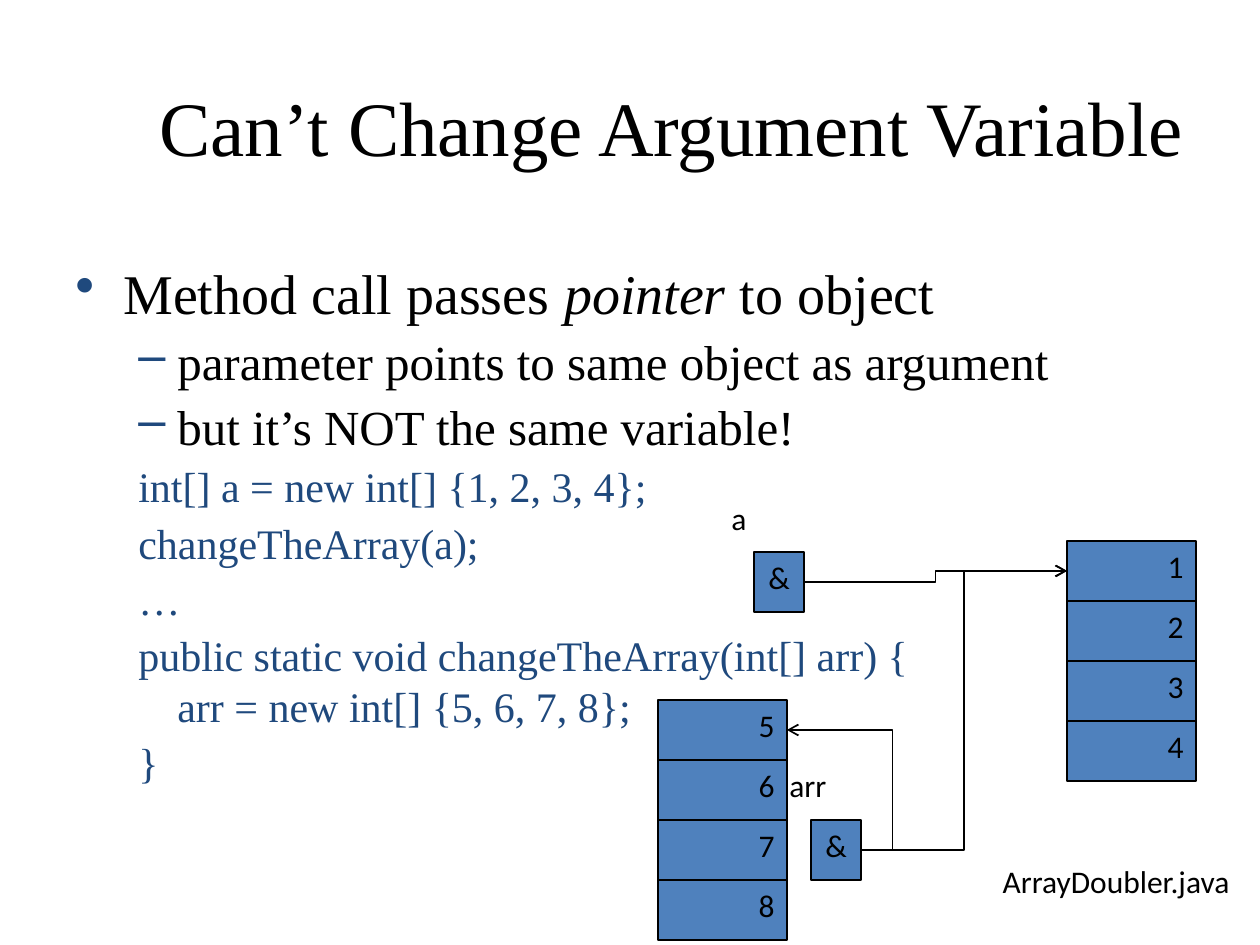
from lxml import etree
from pptx import Presentation, util as u
from pptx.dml.color import RGBColor
from pptx.enum import shapes, text
from pptx.oxml.ns import qn

PX = 914400 / 126
SERIF, SANS = "Times New Roman", "Calibri"
BLACK, NAVY, BLUE = "000000", "1F497D", "4F81BD"


def px(*lengths):
    """Turn pixel lengths into a list of EMU lengths."""
    return [u.Emu(round(length * PX)) for length in lengths]


def style(paragraph, name, size, color, align=text.PP_ALIGN.LEFT):
    paragraph.alignment = align
    paragraph.font.name = name
    paragraph.font.size = u.Pt(size)
    paragraph.font.color.rgb = RGBColor.from_string(color)


presentation = Presentation()
presentation.slide_width, presentation.slide_height = px(1260, 945)
slide = presentation.slides.add_slide(presentation.slide_layouts[6])

# Title
title = slide.shapes.add_textbox(*px(63, 37, 1134, 141)).text_frame
title.word_wrap = True
title.vertical_anchor = text.MSO_ANCHOR.BOTTOM
title.text = "Can’t Change Argument Variable"
style(title.paragraphs[0], SERIF, 44, BLACK, text.PP_ALIGN.RIGHT)

# Bullets and code: runs, size, colour, bullet, left margin, hanging indent
lines = [
    (["Method call passes ", "pointer", " to object"], 32, BLACK, "•", 48, 48),
    (["parameter points to same object as argument"], 28, BLACK, "–", 102, 39),
    (["but it’s NOT the same variable!"], 28, BLACK, "–", 102, 39),
]
code = [
    "int[] a = new int[] {1, 2, 3, 4};",
    "changeTheArray(a);",
    "…",
    "public static void changeTheArray(int[] arr) {\varr = new int[] {5, 6, 7, 8};",
    "}",
]
lines += [([line], 24, NAVY, None, 102, 39) for line in code]

body = slide.shapes.add_textbox(*px(63, 252, 1134, 640)).text_frame
body.word_wrap = True
for number, (runs, size, color, bullet, margin, hanging) in enumerate(lines):
    paragraph = body.add_paragraph() if number else body.paragraphs[0]
    if len(runs) == 1:
        paragraph.text = runs[0]
    else:
        for words in runs:
            run = paragraph.add_run()
            run.text = words
            if words == "pointer":
                run.font.italic = True
    if number:
        paragraph.level = 1
        paragraph.space_before = u.Pt(3.4)
    properties = paragraph._p.get_or_add_pPr()
    left, first = px(margin, -hanging)
    properties.set("marL", str(left))
    properties.set("indent", str(first))
    if bullet:
        bullet_color = etree.SubElement(properties, qn("a:buClr"))
        etree.SubElement(bullet_color, qn("a:srgbClr"), val=NAVY)
        etree.SubElement(properties, qn("a:buChar"), char=bullet)
    else:
        etree.SubElement(properties, qn("a:buNone"))
    style(paragraph, SERIF, size, color)

# Memory diagram: every cell is 60 px high
CELL = 60
right, center = text.PP_ALIGN.RIGHT, text.PP_ALIGN.CENTER
columns = {
    "a": (754, 552, 50, "&", center),
    "old array": (1067, 541, 129, "1234", right),
    "arr": (811, 820, 50, "&", center),
    "new array": (658, 700, 129, "5678", right),
}
first_cells = {}
for name, (left, top, width, values, align) in columns.items():
    group = slide.shapes.add_group_shape()
    for row, value in enumerate(values):
        cell = group.shapes.add_shape(
            shapes.MSO_SHAPE.RECTANGLE, *px(left, top + row * CELL, width, CELL))
        cell.shadow.inherit = False
        cell.fill.solid()
        cell.fill.fore_color.rgb = RGBColor.from_string(BLUE)
        cell.line.color.rgb = RGBColor.from_string(BLACK)
        cell.line.width = u.Pt(1)
        cell.text_frame.vertical_anchor = text.MSO_ANCHOR.TOP
        cell.text_frame.text = value
        style(cell.text_frame.paragraphs[0], SANS, 18, BLACK, align)
        first_cells.setdefault(name, cell)

# Labels
for words, left, top, width, align in [
    ("a", 719, 493, 44, text.PP_ALIGN.LEFT),
    ("arr", 777, 760, 73, text.PP_ALIGN.LEFT),
    ("ArrayDoubler.java", 899, 856, 343, right),
]:
    label = slide.shapes.add_textbox(*px(left, top, width, 64)).text_frame
    label.word_wrap = words == "ArrayDoubler.java"
    label.text = words
    style(label.paragraphs[0], SANS, 18, BLACK, align)

# Pointers: start cell, end cell, side of the end cell, bend position
for start, end, side, bend in [
    ("a", "old array", 1, 50000),
    ("arr", "old array", 1, 50000),
    ("arr", "new array", 3, -42600),
]:
    arrow = slide.shapes.add_connector(shapes.MSO_CONNECTOR.ELBOW, 0, 0, 0, 0)
    arrow.begin_connect(first_cells[start], 3)
    arrow.end_connect(first_cells[end], side)
    arrow.line.color.rgb = RGBColor.from_string(BLACK)
    arrow.line.width = u.Pt(1)
    properties = arrow._element.spPr
    guides = properties.find(qn("a:prstGeom")).get_or_add_avLst()
    etree.SubElement(guides, qn("a:gd"), name="adj1", fmla=f"val {bend}")
    etree.SubElement(arrow.line._get_or_add_ln(), qn("a:tailEnd"), type="arrow")
    etree.SubElement(properties, qn("a:effectLst"))

presentation.save("out.pptx")
